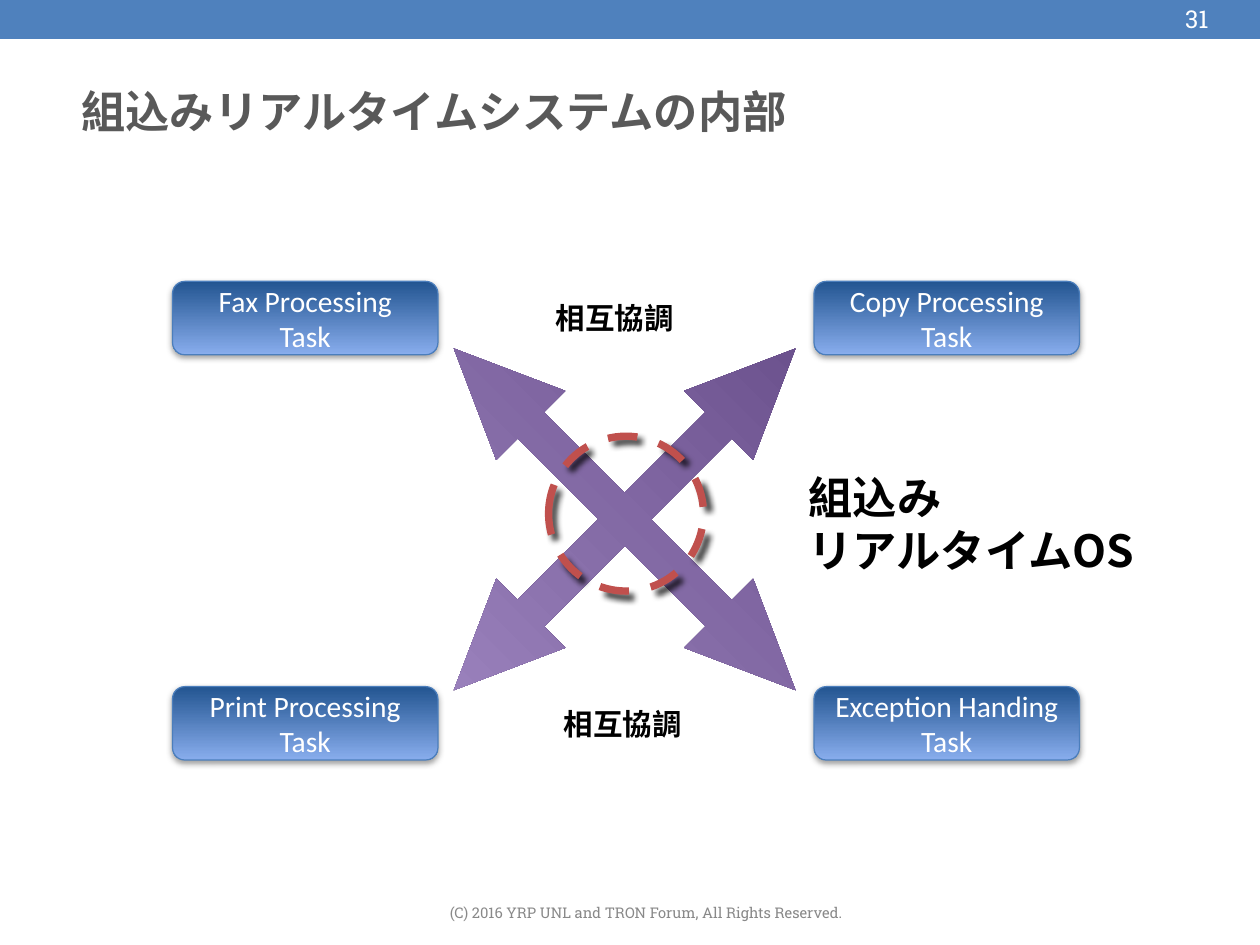
import pptx
import pptx.dml.color
import pptx.enum.dml
import pptx.enum.shapes
import pptx.enum.text
import pptx.oxml
import pptx.oxml.ns
import pptx.util
from pptx.util import Inches

COLORS = {
    "bar": "4F81BD", "white": "FFFFFF", "title": "595959", "footer": "898989",
    "black": "000000", "task_dark": "235591", "task_light": "88ADED",
    "task_line": "4B7EBC", "task_shadow": "808080", "arrow_dark": "553977",
    "arrow_light": "B099D2", "ring": "C0504D",
}
JAPANESE, LATIN, SLAB = "Noto Sans CJK JP", "Calibri", "Roboto Slab"
SHAPE = pptx.enum.shapes.MSO_SHAPE
ALIGN = pptx.enum.text.PP_ALIGN
ANCHOR = pptx.enum.text.MSO_ANCHOR


def rgb(name):
    """Return a palette colour."""
    return pptx.dml.color.RGBColor.from_string(COLORS[name])


def write_text(shape, text, size, font, color, bold=False, align=ALIGN.LEFT,
               anchor=ANCHOR.MIDDLE, insets=(0.1, 0.05)):
    """Write formatted text with line breaks into a shape."""
    frame = shape.text_frame
    frame.word_wrap = True
    frame.auto_size = pptx.enum.text.MSO_AUTO_SIZE.NONE
    frame.vertical_anchor = anchor
    frame.margin_left = frame.margin_right = Inches(insets[0])
    frame.margin_top = frame.margin_bottom = Inches(insets[1])
    paragraph = frame.paragraphs[0]
    paragraph.alignment = align
    for index, line in enumerate(text.split("\n")):
        if index:
            paragraph.add_line_break()
        run = paragraph.add_run()
        run.text = line
        run.font.size = pptx.util.Pt(size)
        run.font.bold = bold
        run.font.color.rgb = rgb(color)
        run.font.name = font
        properties = run.font._element
        east_asian = properties.makeelement(pptx.oxml.ns.qn("a:ea"), {"typeface": font})
        properties.append(east_asian)


def add_text(slide, box, text, **text_format):
    """Add a text box."""
    shape = slide.shapes.add_textbox(*map(Inches, box))
    write_text(shape, text, **text_format)


def add_shape(slide, kind, box, fill=None, line=None, width=1):
    """Add a preset shape with a plain, gradient or empty fill."""
    shape = slide.shapes.add_shape(kind, *map(Inches, box))
    shape.shadow.inherit = False
    if fill is None:
        shape.fill.background()
    elif isinstance(fill, str):
        shape.fill.solid()
        shape.fill.fore_color.rgb = rgb(fill)
    else:
        shape.fill.gradient()
        shape.fill.gradient_angle = 270
        for stop, position, color in zip(shape.fill.gradient_stops, (0, 1), fill):
            stop.position = position
            stop.color.rgb = rgb(color)
    if line is None:
        shape.line.fill.background()
    else:
        shape.line.color.rgb = rgb(line)
        shape.line.width = pptx.util.Pt(width)
    return shape


def add_shadow(shape, color, blur, distance, angle):
    """Give a shape an outer shadow at 75 percent opacity."""
    effects = shape._element.spPr.find(pptx.oxml.ns.qn("a:effectLst"))
    effects.append(pptx.oxml.parse_xml(
        f'<a:outerShdw {pptx.oxml.ns.nsdecls("a")} blurRad="{pptx.util.Pt(blur)}" '
        f'dist="{pptx.util.Pt(distance)}" dir="{angle * 60000}" algn="ctr" rotWithShape="0">'
        f'<a:srgbClr val="{COLORS[color]}"><a:alpha val="75000"/></a:srgbClr></a:outerShdw>'))


def add_page_frame(slide, width, height):
    """Place the top bar, title, page number and copyright line."""
    bar_height = 0.43
    insets = (0.14, 0.07)
    add_shape(slide, SHAPE.RECTANGLE, (0, 0, width, bar_height), "bar", "bar", 2)
    title = slide.shapes.title
    title.left, title.top, title.width, title.height = map(Inches, (0.78, 0.75, 13.04, 1.01))
    write_text(title, "組込みリアルタイムシステムの内部", size=36, font=JAPANESE,
               color="title", bold=True, insets=insets)
    add_text(slide, (width - 1.3, 0, 0.86, bar_height), "31", size=20, font=SLAB,
             color="white", align=ALIGN.RIGHT, insets=insets)
    add_text(slide, (0.79, height - 0.56, 13.03, 0.39),
             "(C) 2016 YRP UNL and TRON Forum, All Rights Reserved.",
             size=12, font=SLAB, color="footer", align=ALIGN.CENTER)


def add_task(slide, box, text):
    """Add one task box."""
    task = add_shape(slide, SHAPE.FLOWCHART_ALTERNATE_PROCESS, box,
                     ("task_dark", "task_light"), "task_line")
    add_shadow(task, "task_shadow", 5, 2, 90)
    write_text(task, text, size=24, font=LATIN, color="white", align=ALIGN.CENTER)


def add_task_diagram(slide, left, top, width, height):
    """Place four tasks in the corners around the crossing arrows."""
    task_width, task_height = 3, 0.83
    rows = (("Fax Processing\nTask", "Copy Processing\nTask"),
            ("Print Processing\nTask", "Exception Handing\nTask"))
    for row, names in enumerate(rows):
        for column, name in enumerate(names):
            add_task(slide, (left + column * (width - task_width),
                             top + row * (height - task_height),
                             task_width, task_height), name)
    add_text(slide, (left + 7.09, top + 2.08, 4.17, 1.31), "組込み\nリアルタイムOS",
             size=36, font=JAPANESE, color="black", bold=True, anchor=ANCHOR.TOP)

    arrows = add_shape(slide, SHAPE.QUAD_ARROW, (left + 2.38, top - 0.04, 5.46, 5.46),
                       ("arrow_dark", "arrow_light"))
    arrows.rotation = 45
    for index, value in enumerate((0.077, 0.101, 0.225)):
        arrows.adjustments[index] = value

    ring = add_shape(slide, SHAPE.OVAL, (left + 4.25, top + 1.75, 1.75, 1.75),
                     line="ring", width=6)
    ring.line.dash_style = pptx.enum.dml.MSO_LINE.DASH
    add_shadow(ring, "black", 5, 6, 45)

    for label_left, label_top in ((3.5, 0.16), (3.59, 4.75)):
        add_text(slide, (left + label_left, top + label_top, 3, 0.51), "相互協調",
                 size=24, font=JAPANESE, color="black", bold=True,
                 align=ALIGN.CENTER, anchor=ANCHOR.TOP)


def main():
    """Build and save the presentation."""
    width, height = 14.24, 10.68
    presentation = pptx.Presentation()
    presentation.slide_width = Inches(width)
    presentation.slide_height = Inches(height)
    slide = presentation.slides.add_slide(presentation.slide_layouts[5])
    add_page_frame(slide, width, height)
    add_task_diagram(slide, 1.95, 3.18, 10.25, 5.41)
    presentation.save("out.pptx")


if __name__ == "__main__":
    main()
